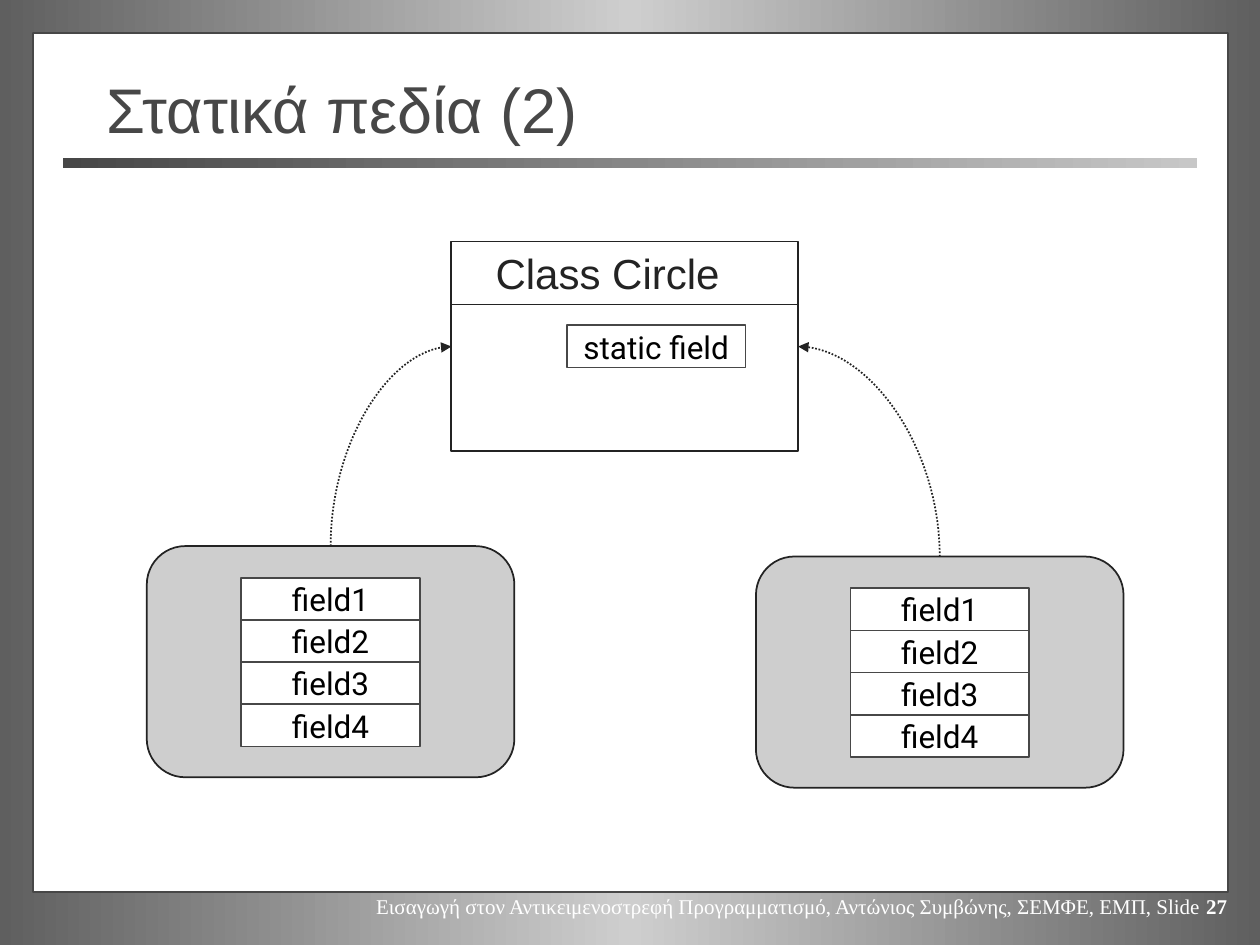
from copy import deepcopy

from pptx import Presentation
from pptx.dml.color import RGBColor
from pptx.enum.dml import MSO_LINE
from pptx.enum.shapes import MSO_CONNECTOR, MSO_SHAPE
from pptx.enum.text import MSO_ANCHOR, PP_ALIGN
from pptx.oxml.ns import qn
from pptx.util import Cm, Pt
from lxml import etree

RECT, ROUNDED = MSO_SHAPE.RECTANGLE, MSO_SHAPE.ROUNDED_RECTANGLE
STRAIGHT, CURVE = MSO_CONNECTOR.STRAIGHT, MSO_CONNECTOR.CURVE
LEFT, CENTER, RIGHT = PP_ALIGN.LEFT, PP_ALIGN.CENTER, PP_ALIGN.RIGHT
MIDDLE = MSO_ANCHOR.MIDDLE
DOTTED = MSO_LINE.ROUND_DOT

COLORS = {
    "white": "FFFFFF", "black": "000000", "ink": "232323", "dark": "474747",
    "edge": "5F5F5F", "silver": "CECECE", "pale": "C7C7C7",
}

# Content; all lengths in cm
TITLE = "Στατικά πεδία (2)"
FOOTER = ("Εισαγωγή στον Αντικειμενοστρεφή Προγραμματισμό, "
          "Αντώνιος Συμβώνης, ΣΕΜΦΕ, ΕΜΠ, Slide ")
SLIDE_NUMBER = "27"
CLASS_NAME = "Class Circle"
STATIC_FIELD = "static field"
FIELDS = ["field1", "field2", "field3", "field4"]

CLASS_BOX = (9.1, 4.87, 6.99, 4.23)
CLASS_HEADER = 1.27
OBJECTS = [(2.96, 11.01), (15.24, 11.22)]
OBJECT_SIZE = (7.41, 4.66)
FIELD_SIZE = (3.6, 0.85)
FIELD_TOP = 0.64


def rgb(name):
    return RGBColor.from_string(COLORS[name])


def cm(*values):
    return [Cm(v) for v in values]


def fill_gradient(fill, stops, names):
    """Spread the named colours evenly; stops is the owner of the a:gsLst."""
    fill.gradient()
    fill.gradient_angle = 0
    gs_list = next(stops.iter(qn("a:gsLst")))
    for _ in names[2:]:
        gs_list.append(deepcopy(gs_list[0]))
    for i, (stop, name) in enumerate(zip(fill.gradient_stops, names)):
        stop.position = i / (len(names) - 1)
        stop.color.rgb = rgb(name)


def add_box(s, box, fill=None, line="ink", kind=RECT):
    sp = s.shapes.add_shape(kind, *cm(*box))
    sp.shadow.inherit = False
    if fill:
        sp.fill.solid()
        sp.fill.fore_color.rgb = rgb(fill)
    else:
        sp.fill.background()
    if line:
        sp.line.color.rgb = rgb(line)
        sp.line.width = Pt(1)
    else:
        sp.line.fill.background()
    return sp


def write(sp, runs, size, font, color, align=LEFT, wrap=False):
    """Fill the first paragraph with (text, bold) runs."""
    tf = sp.text_frame
    tf.word_wrap = wrap
    tf.vertical_anchor = MIDDLE
    p = tf.paragraphs[0]
    p.alignment = align
    for text, bold in runs:
        r = p.add_run()
        r.text = text
        r.font.size, r.font.name, r.font.bold = Pt(size), font, bold
        r.font.color.rgb = rgb(color)
    return p


def add_field(s, x, y, name):
    sp = add_box(s, (x, y, *FIELD_SIZE), "white", "dark")
    write(sp, [(name, False)], 18, "Roboto", "black", CENTER)


def add_line(s, kind, x1, y1, x2, y2):
    line = s.shapes.add_connector(kind, *cm(x1, y1, x2, y2))
    line.line.color.rgb = rgb("ink")
    line.line.width = Pt(1)
    etree.SubElement(line._element.spPr, qn("a:effectLst"))
    return line


def add_reference(s, x1, y1, x2, y2):
    """Dotted quarter curve that leaves upwards and arrives sideways."""
    w, h = abs(y2 - y1), abs(x2 - x1)
    left, top = (x1 + x2 - w) / 2, (y1 + y2 - h) / 2
    to_right = x2 > x1
    start, end = (left, left + w) if to_right else (left + w, left)
    c = add_line(s, CURVE, start, top, end, top + h)
    c.line.dash_style = DOTTED
    sp_pr = c._element.spPr
    sp_pr.find(qn("a:prstGeom")).set("prst", "curvedConnector2")
    sp_pr.find(qn("a:xfrm")).set("rot", str((270 if to_right else 90) * 60000))
    etree.SubElement(sp_pr.find(qn("a:ln")), qn("a:tailEnd"), type="triangle")


def add_frame(s):
    fill_gradient(s.background.fill, s._element, ["edge", "silver", "edge"])
    add_box(s, (0.66, 0.66, 24.1, 17.32), "white", "dark")
    bar = add_box(s, (1.27, 3.18, 22.86, 0.21), line=None)
    fill_gradient(bar.fill, bar._element, ["dark", "pale"])
    footer = s.shapes.add_textbox(*cm(7.21, 17.88, 17.78, 0.76))
    write(footer, [(FOOTER, False), (SLIDE_NUMBER, True)],
          12, "Times New Roman", "white", RIGHT)
    title = s.shapes.title
    title.left, title.top, title.width, title.height = cm(1.9, 1.4, 21.59, 1.57)
    write(title, [(TITLE, False)], 36, "Arial", "dark", wrap=True)
    s.shapes._spTree.append(title._element)


def add_class(s):
    x, y, w, _ = CLASS_BOX
    add_box(s, CLASS_BOX)
    add_line(s, STRAIGHT, x, y + CLASS_HEADER, x + w, y + CLASS_HEADER)
    label = s.shapes.add_textbox(*cm(x + 0.64, y, 5.03, CLASS_HEADER))
    p = write(label, [(CLASS_NAME, False)], 24, "Arial", "ink")
    p.space_before = Pt(4.8)
    add_field(s, 11.43, 6.56, STATIC_FIELD)


def add_object(s, x, y):
    w, h = OBJECT_SIZE
    add_box(s, (x, y, w, h), "silver", kind=ROUNDED)
    field_w, field_h = FIELD_SIZE
    for i, name in enumerate(FIELDS):
        add_field(s, x + (w - field_w) / 2, y + FIELD_TOP + i * field_h, name)
    class_x, class_y, class_w, class_h = CLASS_BOX
    middle = x + w / 2
    side = class_x if middle < class_x else class_x + class_w
    add_reference(s, middle, y, side, class_y + class_h / 2)


def main():
    prs = Presentation()
    prs.slide_width, prs.slide_height = cm(25.4, 19.05)
    s = prs.slides.add_slide(prs.slide_layouts[5])
    add_frame(s)
    add_class(s)
    for x, y in OBJECTS:
        add_object(s, x, y)
    prs.save("out.pptx")


if __name__ == "__main__":
    main()
